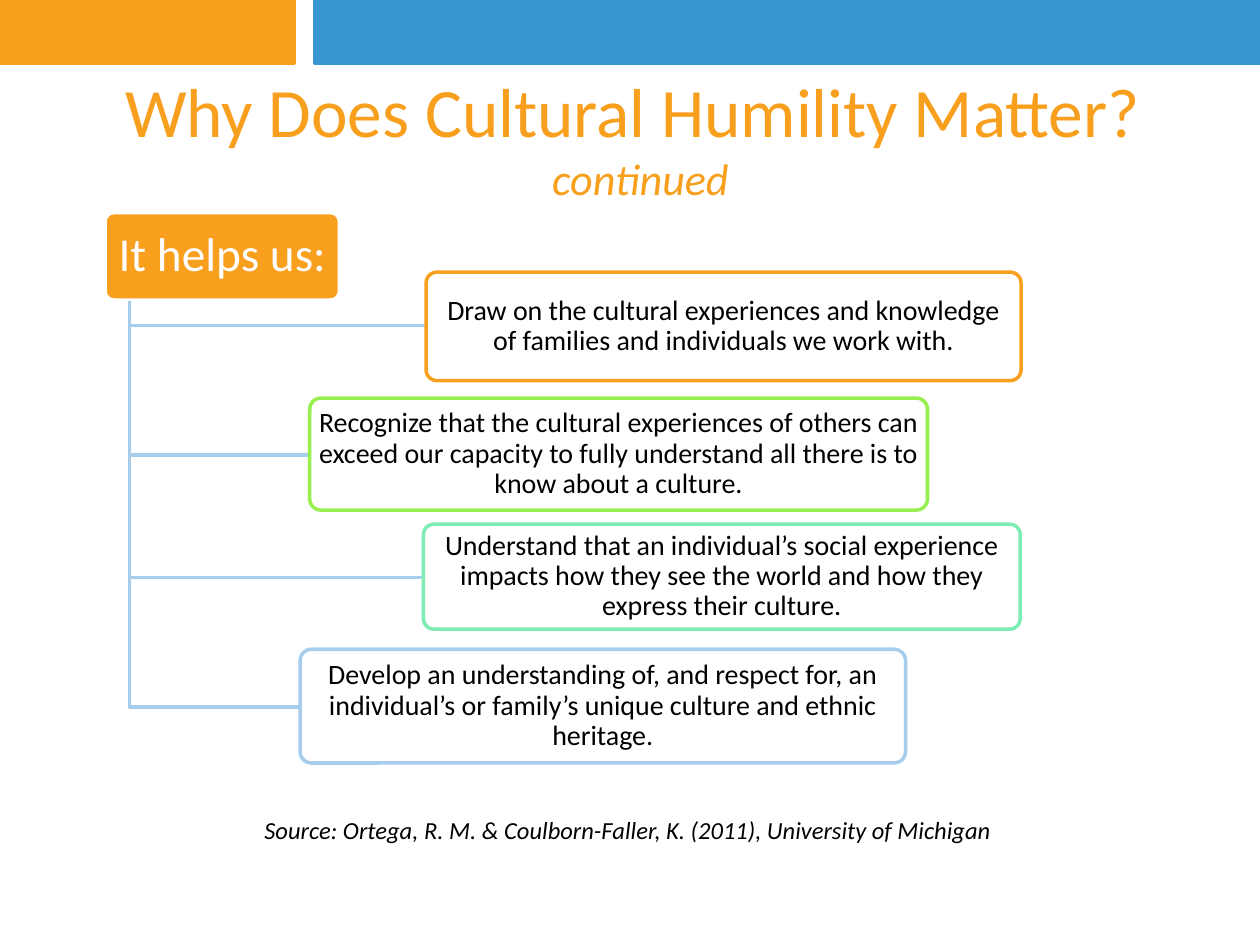
from lxml import etree
from pptx import Presentation
from pptx.dml.color import RGBColor
from pptx.enum.shapes import MSO_SHAPE
from pptx.enum.text import MSO_ANCHOR, PP_ALIGN
from pptx.oxml.ns import qn
from pptx.util import Pt

RECT, ROUNDED = MSO_SHAPE.RECTANGLE, MSO_SHAPE.ROUNDED_RECTANGLE
CENTER, LEFT = PP_ALIGN.CENTER, PP_ALIGN.LEFT
TOP, MIDDLE = MSO_ANCHOR.TOP, MSO_ANCHOR.MIDDLE

ORANGE = RGBColor(0xF8, 0x9F, 0x1E)
BLUE = RGBColor(0x3A, 0x96, 0xD0)
GREEN = RGBColor(0x98, 0xF0, 0x50)
MINT = RGBColor(0x7D, 0xED, 0xB5)
PALE_BLUE = RGBColor(0xA7, 0xCD, 0xED)
WHITE = RGBColor(0xFF, 0xFF, 0xFF)
BLACK = RGBColor(0x00, 0x00, 0x00)

FONT = "Calibri"
LINE_WIDTH = Pt(2)

# Content: boxes are (left, top, width, height) in points
TITLE = "Why Does Cultural Humility Matter? "
SUBTITLE = "continued"
SOURCE = "Source: Ortega, R. M. & Coulborn-Faller, K. (2011), University of Michigan"
LEAD = "It helps us:"
REASONS = [
    ("Draw on the cultural experiences and knowledge of families and "
     "individuals we work with.", ORANGE, (243.5, 155.5, 340, 62)),
    ("Recognize that the cultural experiences of others can exceed our capacity "
     "to fully understand all there is to know about a culture.",
     GREEN, (177, 227.5, 353, 64)),
    ("Understand that an individual’s social experience impacts how they see "
     "the world and how they express their culture.",
     MINT, (242, 299.5, 341, 60)),
    ("Develop an understanding of, and respect for, an individual’s or family’s "
     "unique culture and ethnic heritage.", PALE_BLUE, (171.5, 371, 346, 65)),
]
BANNERS = [(ORANGE, (0, 0, 168, 36)), (BLUE, (180, 0, 540, 36))]
TITLE_BOX = (24, 36, 684, 84)
SOURCE_BOX = (144, 462, 430, 37)
LEAD_BOX = (60, 121.5, 134, 50)
TRUNK_X = 73.5

prs = Presentation()
prs.slide_width, prs.slide_height = Pt(720), Pt(540)
slide = prs.slides.add_slide(prs.slide_layouts[6])
shapes = slide.shapes


def add_panel(kind, box, fill, line):
    panel = shapes.add_shape(kind, *map(Pt, box))
    panel.shadow.inherit = False
    panel.fill.solid()
    panel.fill.fore_color.rgb = fill
    panel.line.color.rgb = line
    panel.line.width = LINE_WIDTH
    if kind == ROUNDED:
        panel.adjustments[0] = 0.1
    return panel


def write(shape, text, size, color, align=CENTER, anchor=MIDDLE, insets=(7.2, 3.6)):
    frame = shape.text_frame
    frame.word_wrap = True
    frame.vertical_anchor = anchor
    frame.margin_left = frame.margin_right = Pt(insets[0])
    frame.margin_top = frame.margin_bottom = Pt(insets[1])
    paragraph = frame.paragraphs[0]
    paragraph.text = text
    paragraph.alignment = align
    for run in paragraph.runs:
        run.font.name = FONT
        run.font.size = Pt(size)
        run.font.color.rgb = color
    return paragraph


# Banner across the top
for color, box in BANNERS:
    add_panel(RECT, box, color, color)

# Title with a smaller second line
title = write(shapes.add_textbox(*map(Pt, TITLE_BOX)),
              TITLE + "\v" + SUBTITLE, 39.6, ORANGE)
title.runs[1].font.size = Pt(25.2)
title.runs[1].font.italic = True

# Source line
source = write(shapes.add_textbox(*map(Pt, SOURCE_BOX)), SOURCE, 14, BLACK, LEFT, TOP)
source.runs[0].font.italic = True

# Lead box
lead = write(add_panel(ROUNDED, LEAD_BOX, ORANGE, WHITE), LEAD, 27, WHITE,
             insets=(4, 3))
lead.line_spacing = 0.9

# Each reason hangs from the lead box by an elbow line
trunk_top = LEAD_BOX[1] + LEAD_BOX[3]
for text, color, box in REASONS:
    left, top, width, height = box
    middle = top + height / 2
    builder = shapes.build_freeform(TRUNK_X, trunk_top, scale=Pt(1))
    builder.add_line_segments([(TRUNK_X, middle), (left, middle)], close=False)
    elbow = builder.convert_to_shape()
    elbow.shadow.inherit = False
    elbow.fill.background()
    elbow.line.color.rgb = PALE_BLUE
    elbow.line.width = LINE_WIDTH

    panel = add_panel(ROUNDED, box, WHITE, color)
    fill_color = panel.fill._xPr.find(qn("a:solidFill"))[0]
    etree.SubElement(fill_color, qn("a:alpha"), val="90000")
    write(panel, text, 16, BLACK, insets=(2, 1.5)).line_spacing = 0.9

prs.save("out.pptx")
